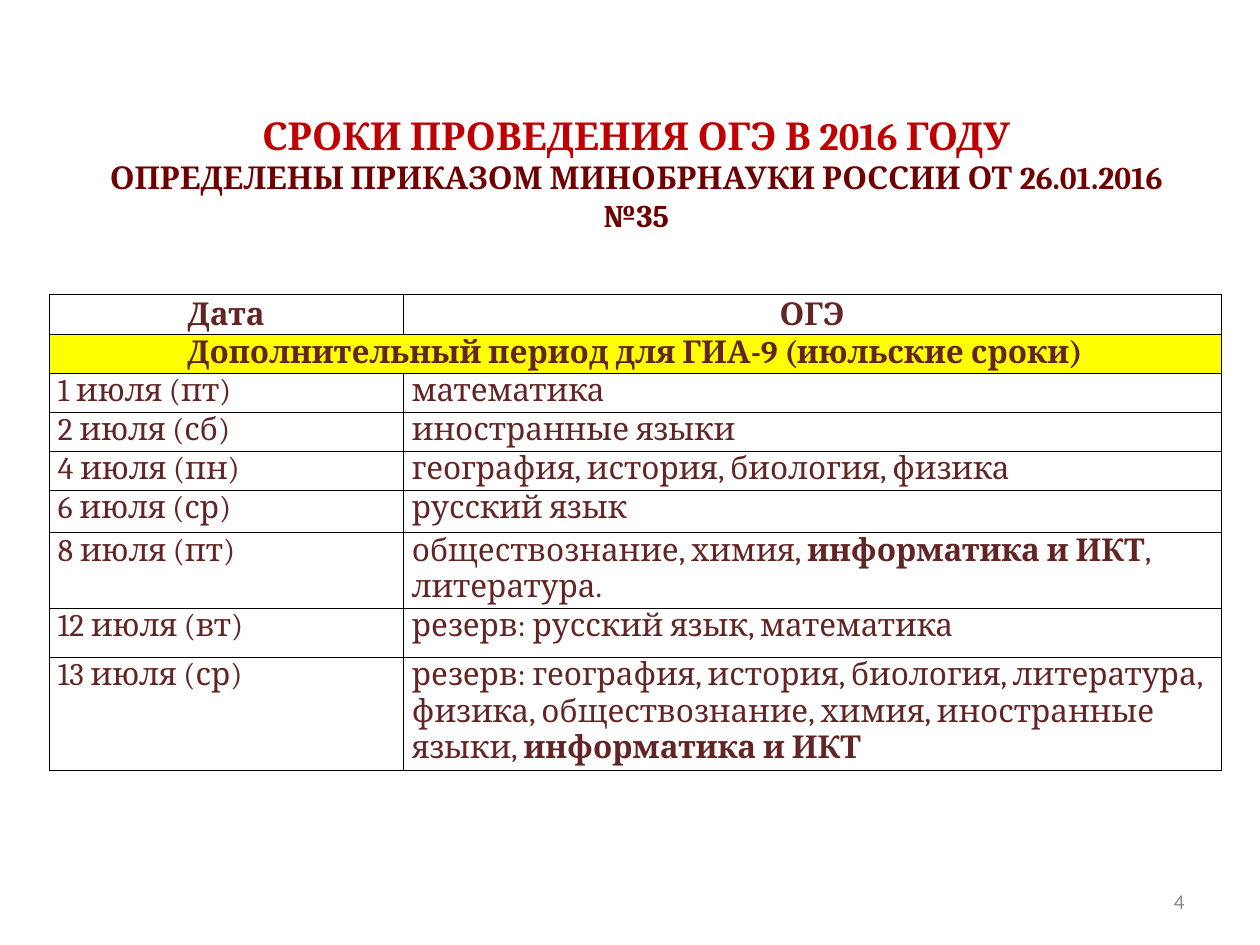
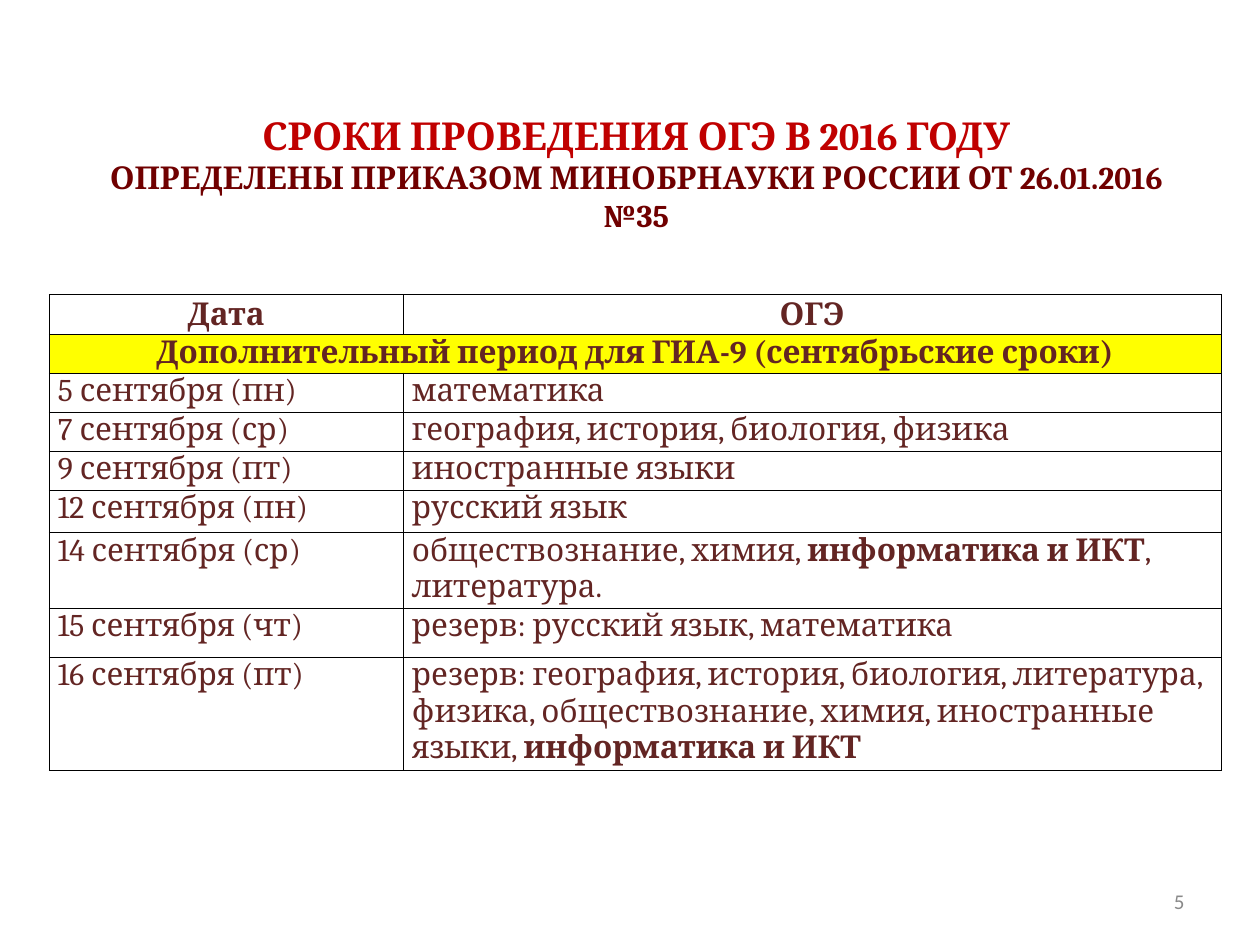
from dataclasses import dataclass

from lxml.etree import SubElement
from pptx import Presentation
from pptx.dml.color import RGBColor
from pptx.enum.text import MSO_ANCHOR, PP_ALIGN
from pptx.oxml.ns import qn
from pptx.slide import Slide
from pptx.table import _Cell
from pptx.util import Pt

COLORS = {
    "title": "C00000",
    "subtitle": "700000",
    "table_text": "632523",
    "highlight": "FFFF00",
    "border": "000000",
    "page_number": "898989",
}
HEADING_FONT = "Cambria"
NUMBER_FONT = "Calibri"

TITLE = "СРОКИ ПРОВЕДЕНИЯ ОГЭ В 2016 ГОДУ"
SUBTITLE = "ОПРЕДЕЛЕНЫ ПРИКАЗОМ МИНОБРНАУКИ РОССИИ ОТ 26.01.2016 №35"
HEADERS = ("Дата", "ОГЭ")
EMPHASIS = "информатика и ИКТ"

# Subjects that both periods share
MATH = "математика"
LANGUAGES = "иностранные языки"
SCIENCES = "география, история, биология, физика"
RUSSIAN = "русский язык"
SOCIAL = f"обществознание, химия, {EMPHASIS}, литература."
RESERVE_CORE = "резерв: русский язык, математика"
RESERVE_REST = ("резерв: география, история, биология, литература, физика, "
                f"обществознание, химия, иностранные языки, {EMPHASIS}")
LAST_EXAMS = (RUSSIAN, SOCIAL, RESERVE_CORE, RESERVE_REST)

COLUMN_WIDTHS = (202.3, 467.3)
ROW_HEIGHTS = (22.3,) * 5 + (24.5, 42.8, 28, 64.6)


@dataclass(frozen=True)
class Period:
    number: int
    name: str
    dates: tuple[str, ...]
    exams: tuple[str, ...]


@dataclass(frozen=True)
class TextStyle:
    font: str
    size: float
    color: str
    bold: bool = False
    align: PP_ALIGN = PP_ALIGN.LEFT


TITLE_STYLE = TextStyle(HEADING_FONT, 22, "title", True, PP_ALIGN.CENTER)
SUBTITLE_STYLE = TextStyle(HEADING_FONT, 18, "subtitle", True, PP_ALIGN.CENTER)
HEADER_STYLE = TextStyle(HEADING_FONT, 18, "table_text", True, PP_ALIGN.CENTER)
BODY_STYLE = TextStyle(HEADING_FONT, 18, "table_text")
NUMBER_STYLE = TextStyle(NUMBER_FONT, 12, "page_number", align=PP_ALIGN.RIGHT)

PERIODS = (
    Period(4, "июльские сроки",
           ("1 июля (пт)", "2 июля (сб)", "4 июля (пн)", "6 июля (ср)",
            "8 июля (пт)", "12 июля (вт)", "13 июля (ср)"),
           (MATH, LANGUAGES, SCIENCES) + LAST_EXAMS),
    Period(5, "сентябрьские сроки",
           ("5 сентября (пн)", "7 сентября (ср)", "9 сентября (пт)", "12 сентября (пн)",
            "14 сентября (ср)", "15 сентября (чт)", "16 сентября (пт)"),
           (MATH, SCIENCES, LANGUAGES) + LAST_EXAMS),
)


def write_paragraph(para, text: str, style: TextStyle) -> None:
    """Write the text, with the emphasised subject in bold."""
    para.alignment = style.align
    for part in text.partition(EMPHASIS):
        if not part:
            continue
        span = para.add_run()
        span.text = part
        span.font.name = style.font
        span.font.size = Pt(style.size)
        span.font.bold = style.bold or part == EMPHASIS
        span.font.color.rgb = RGBColor.from_string(COLORS[style.color])


def add_text(page: Slide, left: float, top: float, width: float, height: float,
             lines: list[tuple[str, TextStyle]], bottom_inset: float = 3.6) -> None:
    box = page.shapes.add_textbox(Pt(left), Pt(top), Pt(width), Pt(height))
    frame = box.text_frame
    frame.word_wrap = True
    frame.vertical_anchor = MSO_ANCHOR.MIDDLE
    frame.margin_bottom = Pt(bottom_inset)
    for index, (text, style) in enumerate(lines):
        para = frame.add_paragraph() if index else frame.paragraphs[0]
        write_paragraph(para, text, style)


def add_borders(cell: _Cell) -> None:
    properties = cell._tc.get_or_add_tcPr()
    for side in ("a:lnL", "a:lnR", "a:lnT", "a:lnB"):
        line = SubElement(properties, qn(side), w=str(Pt(0.5)))
        fill = SubElement(line, qn("a:solidFill"))
        SubElement(fill, qn("a:srgbClr"), val=COLORS["border"])


def fill_cell(cell: _Cell, text: str, style: TextStyle) -> None:
    centred = style.align == PP_ALIGN.CENTER
    cell.margin_left = cell.margin_right = Pt(0.7 if centred else 5)
    cell.margin_top = Pt(0.7 if centred else 0)
    cell.margin_bottom = Pt(0)
    write_paragraph(cell.text_frame.paragraphs[0], text, style)


def add_schedule(page: Slide, period: Period) -> None:
    table = page.shapes.add_table(
        len(ROW_HEIGHTS), len(COLUMN_WIDTHS), Pt(28.1), Pt(168.5),
        Pt(sum(COLUMN_WIDTHS)), Pt(sum(ROW_HEIGHTS))).table
    for column, width in zip(table.columns, COLUMN_WIDTHS):
        column.width = Pt(width)
    for row, height in zip(table.rows, ROW_HEIGHTS):
        row.height = Pt(height)
    for cell in (cell for row in table.rows for cell in row.cells):
        add_borders(cell)
        cell.fill.background()

    # Column headings
    for column, header in enumerate(HEADERS):
        cell = table.cell(0, column)
        cell.vertical_anchor = MSO_ANCHOR.MIDDLE
        fill_cell(cell, header, HEADER_STYLE)

    # Highlighted period across both columns
    band = table.cell(1, 0)
    band.merge(table.cell(1, 1))
    band.fill.solid()
    band.fill.fore_color.rgb = RGBColor.from_string(COLORS["highlight"])
    fill_cell(band, f"Дополнительный период для ГИА-9 ({period.name})", HEADER_STYLE)

    # Exam days
    for row, entry in enumerate(zip(period.dates, period.exams), start=2):
        for column, text in enumerate(entry):
            fill_cell(table.cell(row, column), text, BODY_STYLE)


def main() -> None:
    deck = Presentation()
    deck.slide_width, deck.slide_height = Pt(720), Pt(540)
    for period in PERIODS:
        page = deck.slides.add_slide(deck.slide_layouts[6])
        add_text(page, 39.6, 70.6, 648, 77,
                 [(TITLE, TITLE_STYLE), (SUBTITLE, SUBTITLE_STYLE)], bottom_inset=24.6)
        add_schedule(page, period)
        add_text(page, 516, 500.5, 168, 28.75, [(str(period.number), NUMBER_STYLE)])
    deck.save("out.pptx")


if __name__ == "__main__":
    main()
